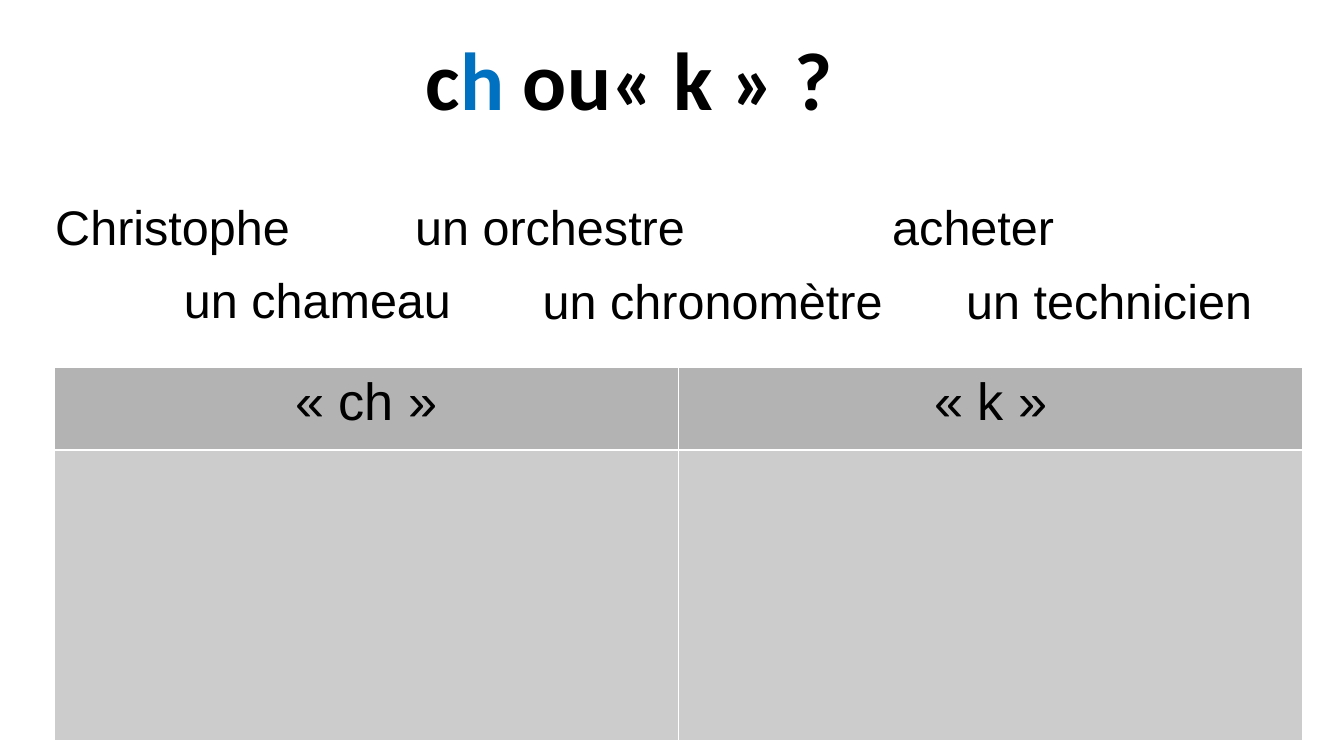
from lxml.etree import SubElement
from pptx import Presentation
from pptx.dml.color import RGBColor
from pptx.enum.text import MSO_ANCHOR, PP_ALIGN
from pptx.oxml.ns import qn
from pptx.util import Inches, Pt

WIDE = 10
HIGH = WIDE * 9 / 16
COLORS = {"ink": "000000", "blue": "0070C0", "head": "B3B3B3", "body": "CCCCCC", "rule": "FFFFFF"}
WORDS = [
    ("Christophe", 3.13, 25.24, 19.7, 9.78),
    ("un orchestre", 29.9, 25.24, 31.5, 14.04),
    ("acheter", 65.4, 25.24, 22.8, 16.18),
    ("un chameau", 12.7, 34.84, 22.8, 16.18),
    ("un chronomètre", 39.4, 35.02, 30.7, 12.62),
    ("un technicien", 70.9, 35.02, 29.1, 16.18),
]


def place(left, top, width, height):
    """Turn percentages of the slide into lengths."""
    return [Inches(part * side / 100) for part, side in
            zip((left, top, width, height), (WIDE, HIGH, WIDE, HIGH))]


def style(run, size, face="Arial", color="ink", bold=False):
    """Set the font of a run."""
    font = run.font
    font.size, font.name, font.bold = Pt(size), face, bold
    font.color.rgb = RGBColor.from_string(COLORS[color])


def add_box(slide, area):
    """Add a wrapping text box and return its frame."""
    frame = slide.shapes.add_textbox(*place(*area)).text_frame
    frame.word_wrap = True
    return frame


def add_word(slide, word, *area):
    """Add one word to be sorted."""
    frame = add_box(slide, area)
    frame.text = word
    style(frame.paragraphs[0].runs[0], 26)


def add_title(slide):
    """Add the title with its blue letter."""
    frame = add_box(slide, (30.7, 0, 44.9, 20.62))
    frame.vertical_anchor = MSO_ANCHOR.MIDDLE
    line = frame.paragraphs[0]
    for text, color in (("c", "ink"), ("h ", "blue"), ("ou« k » ?", "ink")):
        run = line.add_run()
        run.text = text
        style(run, 44, "Calibri", color, True)


def paint(cell, color):
    """Give a cell its white borders and its fill."""
    props = cell._tc.get_or_add_tcPr()
    for side in ("lnL", "lnR", "lnT", "lnB"):
        edge = SubElement(props, qn(f"a:{side}"), w=str(Pt(1)))
        fill = SubElement(edge, qn("a:solidFill"))
        SubElement(fill, qn("a:srgbClr"), val=COLORS["rule"])
    cell.fill.solid()
    cell.fill.fore_color.rgb = RGBColor.from_string(COLORS[color])


def add_grid(slide, heads):
    """Add the sorting table with one column per sound."""
    area = place(4.03, 48.53, 92.9, 49.42)
    table = slide.shapes.add_table(2, len(heads), *area).table
    for row, high, color in zip(table.rows, (0.62, 2.16), ("head", "body")):
        row.height = Inches(high)
        for cell in row.cells:
            paint(cell, color)
    for cell, head in zip(table.rows[0].cells, heads):
        cell.text_frame.text = head
        line = cell.text_frame.paragraphs[0]
        line.alignment = PP_ALIGN.CENTER
        style(line.runs[0], 28)


def main():
    """Build and save the slide."""
    deck = Presentation()
    deck.slide_width, deck.slide_height = Inches(WIDE), Inches(HIGH)
    slide = deck.slides.add_slide(deck.slide_layouts[6])
    add_grid(slide, ("« ch »", "« k »"))
    add_title(slide)
    for word in WORDS:
        add_word(slide, *word)
    deck.save("out.pptx")


if __name__ == "__main__":
    main()
